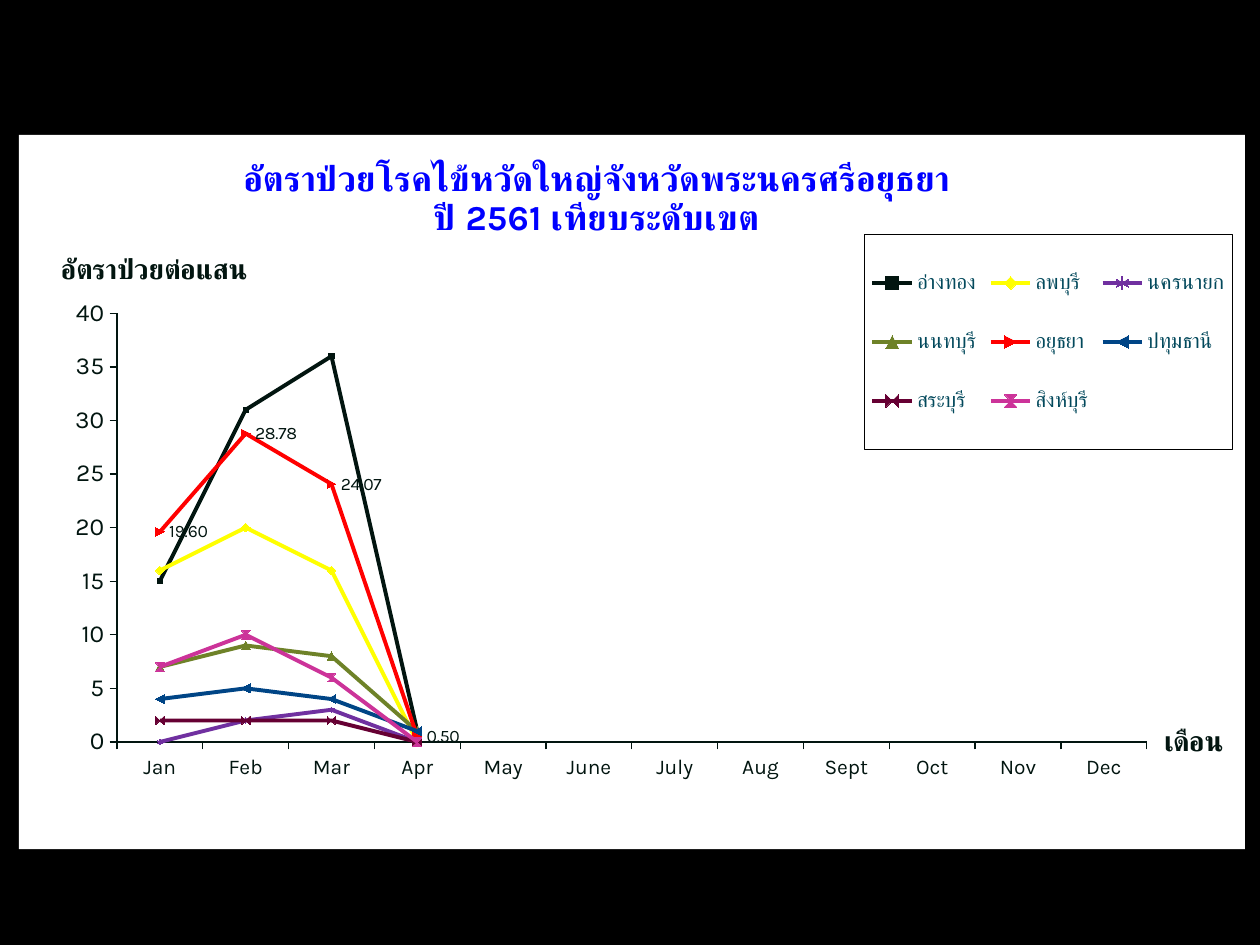
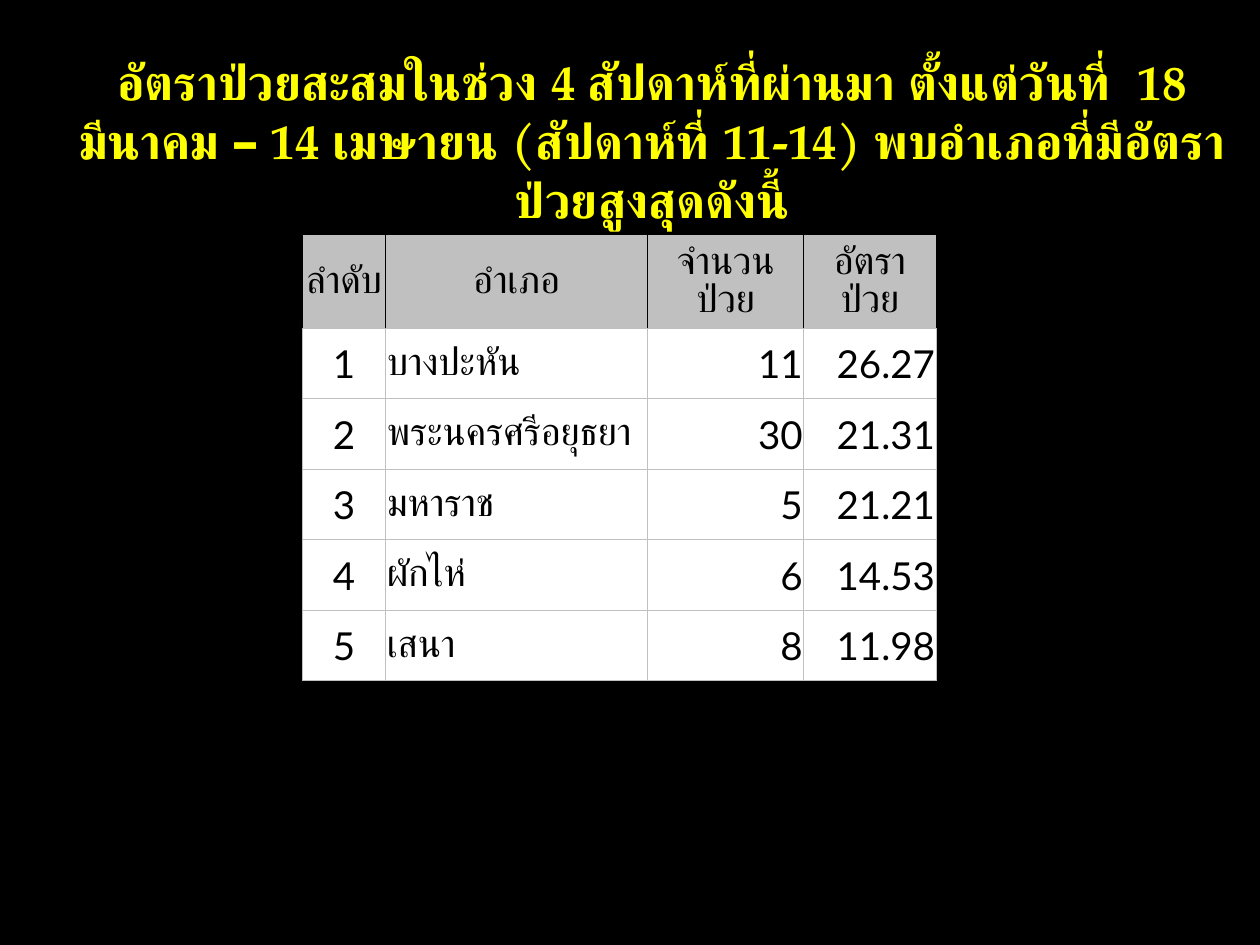
import pptx
import pptx.chart.data
import pptx.dml.color
import pptx.enum.chart
import pptx.enum.text
import pptx.oxml
import pptx.oxml.ns
import pptx.util

Inches = pptx.util.Inches
Pt = pptx.util.Pt
rgb = pptx.dml.color.RGBColor.from_string
qn = pptx.oxml.ns.qn
nsdecls = pptx.oxml.ns.nsdecls
chart_enum = pptx.enum.chart
Align = pptx.enum.text.PP_ALIGN
Anchor = pptx.enum.text.MSO_ANCHOR

COLOURS = {
    "black": "000000", "white": "FFFFFF", "ink": "021510", "blue": "0000FF",
    "legend": "03495C", "yellow": "FFFF00", "purple": "7030A0", "olive": "6E8228",
    "red": "FF0000", "navy": "004586", "maroon": "660033", "pink": "CC3399",
    "grey": "C0C0C0",
}


def style_font(font, colour, **values):
    for name, value in values.items():
        setattr(font, name, value)
    font.color.rgb = rgb(COLOURS[colour])


def place(element, left, top, width=None, height=None):
    """Give a chart part a manual layout, in fractions of the chart."""
    for old in element.findall(qn("c:layout")):
        element.remove(old)
    target = '<c:layoutTarget val="inner"/>' if element.tag == qn("c:plotArea") else ""
    modes = '<c:xMode val="edge"/><c:yMode val="edge"/>'
    sizes = "".join(f'<c:{key} val="{value}"/>' for key, value in
                    zip("xywh", (left, top, width, height)) if value is not None)
    layout = pptx.oxml.parse_xml(
        f'<c:layout {nsdecls("c")}><c:manualLayout>{target}{modes}{sizes}'
        '</c:manualLayout></c:layout>')
    leads = len(element) and element[0].tag in (qn("c:tx"), qn("c:legendPos"))
    element.insert(1 if leads else 0, layout)


deck = pptx.Presentation()
deck.slide_width, deck.slide_height = Inches(10), Inches(7.5)
pages = []
for _ in range(2):
    page = deck.slides.add_slide(deck.slide_layouts[6])
    page.background.fill.solid()
    page.background.fill.fore_color.rgb = rgb(COLOURS["black"])
    pages.append(page)
chart_page, table_page = pages

# Slide 1: monthly rates by province
MONTHS = ["Jan", "Feb", "Mar", "Apr", "May", "June",
          "July", "Aug", "Sept", "Oct", "Nov", "Dec"]
Marker = chart_enum.XL_MARKER_STYLE
PROVINCES = [
    ("อ่างทอง", [15, 31, 36, 1], "ink", Marker.SQUARE, 3),
    ("ลพบุรี", [16, 20, 16, 0], "yellow", None, 5),
    ("นครนายก", [0, 2, 3, 0], "purple", Marker.STAR, 3),
    ("นนทบุรี", [7, 9, 8, 1], "olive", None, 5),
    ("อยุธยา", [19.6, 28.78, 24.07, 0.5], "red", None, 5),
    ("ปทุมธานี", [4, 5, 4, 1], "navy", None, 5),
    ("สระบุรี", [2, 2, 2, 0], "maroon", None, 5),
    ("สิงห์บุรี", [7, 10, 6, 0], "pink", None, 5),
]
HIGHLIGHT = "อยุธยา"

data = pptx.chart.data.CategoryChartData()
data.categories = MONTHS
for name, rates, *_ in PROVINCES:
    data.add_series(name, rates + [None] * (len(MONTHS) - len(rates)))
chart = chart_page.shapes.add_chart(
    chart_enum.XL_CHART_TYPE.LINE_MARKERS, Inches(0.15), Inches(1.07),
    Inches(9.73), Inches(5.67), data).chart
style_font(chart.font, "ink", name="Karla", size=Pt(16))
plot = chart.plots[0]
plot.vary_by_categories = False

for series, (name, _, colour, marker, size) in zip(plot.series, PROVINCES):
    series.smooth = False
    series.format.line.width = Pt(2.25)
    series.format.line.color.rgb = rgb(COLOURS[colour])
    if marker is not None:
        series.marker.style = marker
    series.marker.size = size
    series.marker.format.fill.solid()
    series.marker.format.fill.fore_color.rgb = rgb(COLOURS[colour])
    series.marker.format.line.color.rgb = rgb(COLOURS[colour])
    if name == HIGHLIGHT:
        labels = series.data_labels
        label_format = {"show_value": True, "number_format": "0.00",
                        "number_format_is_linked": False,
                        "position": chart_enum.XL_LABEL_POSITION.RIGHT}
        for key, value in label_format.items():
            setattr(labels, key, value)
        style_font(labels.font, "ink", name="Karla", size=Pt(10))

months, rates = chart.category_axis, chart.value_axis
for axis, size in ((months, 12), (rates, 14)):
    axis.has_major_gridlines = False
    axis.major_tick_mark = chart_enum.XL_TICK_MARK.OUTSIDE
    axis.format.line.width = Pt(0.75)
    axis.format.line.color.rgb = rgb(COLOURS["ink"])
    style_font(axis.tick_labels.font, "ink", name="Karla", size=Pt(size))
rates.minimum_scale, rates.maximum_scale, rates.major_unit = 0, 40, 5
rates.tick_labels.number_format = "0"
rates.tick_labels.number_format_is_linked = False

chart.has_title = True
TITLES = [
    (chart.chart_title, "อัตราป่วยโรคไข้หวัดใหญ่จังหวัดพระนครศรีอยุธยา\nปี 2561 เทียบระดับเขต",
     "blue", 20, 0.18, 0.03),
    (rates.axis_title, "อัตราป่วยต่อแสน", "ink", 16, 0.03, 0.16),
    (months.axis_title, "เดือน", "ink", 16, 0.93, 0.82),
]
for title, words, colour, size, left, top in TITLES:
    frame = title.text_frame
    frame.text = words
    frame._txBody.bodyPr.set("rot", "0")
    for para in frame.paragraphs:
        for span in para.runs:
            style_font(span.font, colour, name="Karla", size=Pt(size), bold=True)
    place(title._element, left, top)

chart.has_legend = True
legend = chart.legend
legend.position = chart_enum.XL_LEGEND_POSITION.RIGHT
legend.include_in_layout = False
style_font(legend.font, "legend", name="Karla", size=Pt(12))
place(legend._element, 0.69, 0.14, 0.3, 0.3)
place(chart._chartSpace.chart.plotArea, 0.08, 0.25, 0.84, 0.6)

solid = '<a:solidFill><a:srgbClr val="{}"/></a:solidFill>'
outline = solid.format(COLOURS["black"])
for part, line in ((chart._chartSpace, "<a:noFill/>"), (legend._element, outline)):
    part.find(qn("c:txPr")).addprevious(pptx.oxml.parse_xml(
        f'<c:spPr {nsdecls("c", "a")}>{solid.format(COLOURS["white"])}'
        f'<a:ln w="9525">{line}</a:ln></c:spPr>'))

# Slide 2: districts with the highest rates
box = table_page.shapes.add_textbox(Inches(0.35), Inches(0.36), Inches(9.65), Inches(1.04))
box.text_frame.word_wrap = True
para = box.text_frame.paragraphs[0]
para.alignment = Align.CENTER
span = para.add_run()
span.text = ("อัตราป่วยสะสมในช่วง 4 สัปดาห์ที่ผ่านมา ตั้งแต่วันที่  18 มีนาคม – 14 เมษายน "
             "(สัปดาห์ที่ 11-14) พบอำเภอที่มีอัตราป่วยสูงสุดดังนี้")
style_font(span.font, "yellow", name="TeX Gyre Pagella", size=Pt(28), bold=True)

DISTRICTS = [
    ("ลำดับ", "อำเภอ", "จำนวนป่วย", "อัตราป่วย"),
    ("1", "บางปะหัน", "11", "26.27"),
    ("2", "พระนครศรีอยุธยา", "30", "21.31"),
    ("3", "มหาราช", "5", "21.21"),
    ("4", "ผักไห่", "6", "14.53"),
    ("5", "เสนา", "8", "11.98"),
]
COLUMNS = [(0.66, Align.CENTER), (2.08, Align.LEFT), (1.24, Align.RIGHT), (1.05, Align.RIGHT)]
CELL_FORMAT = {"vertical_anchor": Anchor.MIDDLE, "margin_left": Inches(0.01),
               "margin_top": Inches(0.01), "margin_right": Inches(0.01), "margin_bottom": 0}

table = table_page.shapes.add_table(
    len(DISTRICTS), len(COLUMNS), Inches(2.4), Inches(1.86), Inches(5.03), Inches(3.36)).table
for column, (width, _) in zip(table.columns, COLUMNS):
    column.width = Inches(width)
for row_index, row in enumerate(DISTRICTS):
    header = row_index == 0
    table.rows[row_index].height = Inches(0.56)
    for column_index, words in enumerate(row):
        cell = table.cell(row_index, column_index)
        for key, value in CELL_FORMAT.items():
            setattr(cell, key, value)
        cell.fill.solid()
        cell.fill.fore_color.rgb = rgb(COLOURS["grey" if header else "white"])
        para = cell.text_frame.paragraphs[0]
        para.alignment = Align.CENTER if header else COLUMNS[column_index][1]
        span = para.add_run()
        span.text = words
        style_font(span.font, "black", name="Lato", size=Pt(22))
        for place_index, side in enumerate("LRTB"):
            edge = COLOURS["black" if header and side != "B" else "grey"]
            cell._tc.get_or_add_tcPr().insert(place_index, pptx.oxml.parse_xml(
                f'<a:ln{side} {nsdecls("a")} w="6350">{solid.format(edge)}</a:ln{side}>'))

deck.save("out.pptx")
